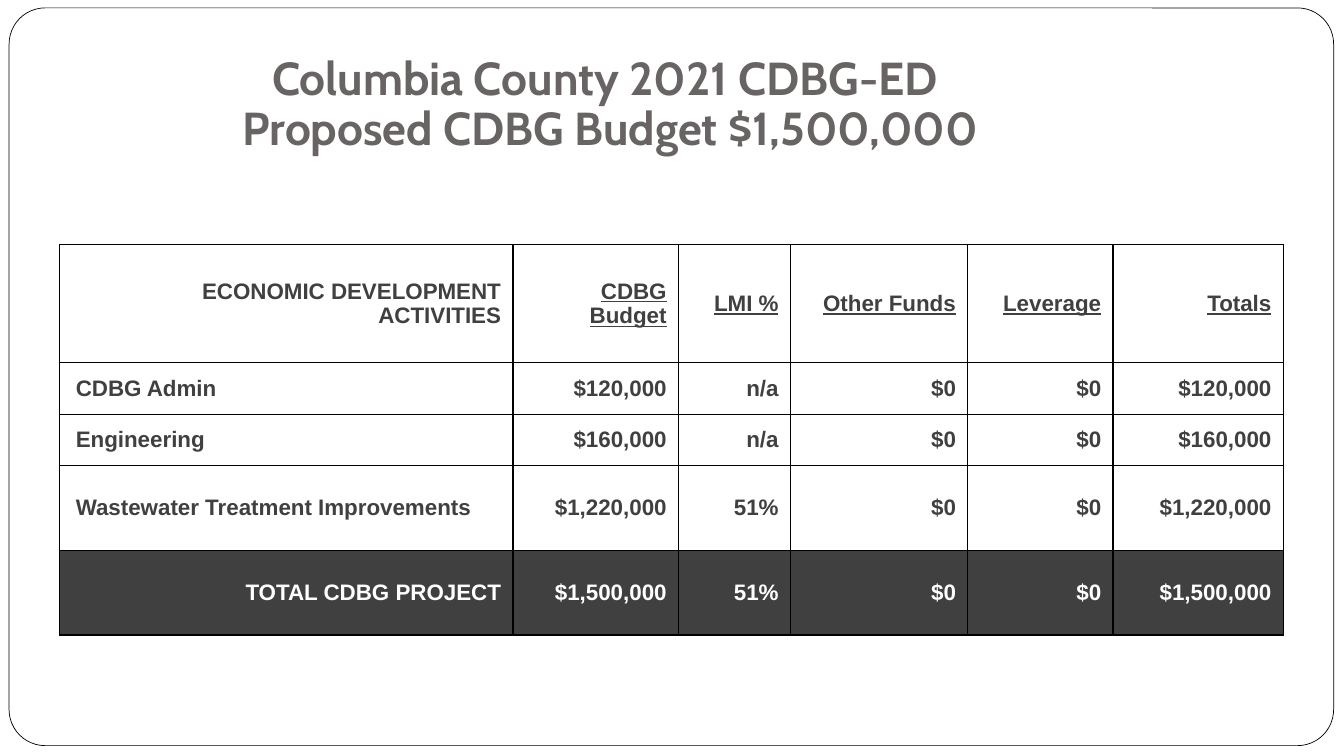
"""Build the Columbia County CDBG budget slide."""
import pptx
import pptx.dml.color
import pptx.enum.shapes
import pptx.enum.text
import pptx.oxml
import pptx.oxml.ns
import pptx.util

Cm, Pt = pptx.util.Cm, pptx.util.Pt
RGBColor = pptx.dml.color.RGBColor
ALIGN = pptx.enum.text.PP_ALIGN
ANCHOR = pptx.enum.text.MSO_ANCHOR

BLACK = RGBColor(0x00, 0x00, 0x00)
WHITE = RGBColor(0xFF, 0xFF, 0xFF)
CHARCOAL = RGBColor(0x40, 0x40, 0x40)
TITLE_GREY = RGBColor(0x69, 0x64, 0x64)

TITLE = "Columbia County 2021 CDBG-ED \vProposed CDBG Budget $1,500,000"
ROWS = [
    ("ECONOMIC DEVELOPMENT ACTIVITIES", "CDBG Budget", "LMI %", "Other Funds", "Leverage", "Totals"),
    ("CDBG Admin", "$120,000", "n/a", "$0", "$0", "$120,000"),
    ("Engineering", "$160,000", "n/a", "$0", "$0", "$160,000"),
    ("Wastewater Treatment Improvements", "$1,220,000", "51%", "$0", "$0", "$1,220,000"),
    ("TOTAL CDBG PROJECT", "$1,500,000", "51%", "$0", "$0", "$1,500,000"),
]
COL_WIDTHS = (11.43, 4.17, 2.82, 4.47, 3.66, 4.29)
ROW_HEIGHTS = (2.97, 1.3, 1.3, 2.13, 2.13)
FRAME_BOX = (0.23, 0.2, 33.38, 18.59)
TITLE_BOX = (5.59, 1.27, 19.58, 3.89)
TABLE_BOX = (1.5, 6.17, sum(COL_WIDTHS), sum(ROW_HEIGHTS))
CELL_FORMAT = {
    "margin_left": Cm(0.41), "margin_right": Cm(0.3),
    "margin_top": Cm(0.2), "margin_bottom": Cm(0.2),
    "vertical_anchor": ANCHOR.MIDDLE,
}


def set_attrs(obj, values):
    """Set every attribute in a dict on an object."""
    for name, value in values.items():
        setattr(obj, name, value)


def set_font(font, color, values):
    """Format a font and give it a colour."""
    set_attrs(font, values)
    font.color.rgb = color


def add_borders(cell):
    """Draw one-point black lines on all four sides of a cell."""
    tc_pr = cell._tc.get_or_add_tcPr()
    for side in "LRTB":
        tc_pr.append(pptx.oxml.parse_xml(
            f'<a:ln{side} {pptx.oxml.ns.nsdecls("a")} w="{Pt(1)}">'
            f'<a:solidFill><a:srgbClr val="{BLACK}"/></a:solidFill></a:ln{side}>'))


def add_title(s):
    """Place and format the title over the rounded frame."""
    title = s.shapes.title
    set_attrs(title, dict(zip(("left", "top", "width", "height"), map(Cm, TITLE_BOX))))
    tf = title.text_frame
    tf.text = TITLE
    set_attrs(tf, {"word_wrap": True, "vertical_anchor": ANCHOR.TOP,
                   "auto_size": pptx.enum.text.MSO_AUTO_SIZE.NONE})
    p = tf.paragraphs[0]
    set_attrs(p, {"alignment": ALIGN.CENTER, "line_spacing": 0.9})
    for r in p.runs:
        set_font(r.font, TITLE_GREY, {"name": "Cabin", "size": Pt(33), "bold": True})

    frame = s.shapes.add_shape(pptx.enum.shapes.MSO_SHAPE.ROUNDED_RECTANGLE, *map(Cm, FRAME_BOX))
    frame.adjustments[0] = 0.049
    frame.shadow.inherit = False
    frame.fill.solid()
    frame.fill.fore_color.rgb = WHITE
    frame.line.color.rgb = BLACK
    frame.line.width = Pt(0.5)
    title._element.addprevious(frame._element)


def add_budget(s):
    """Add the budget table with its header and total rows."""
    table = s.shapes.add_table(len(ROWS), len(COL_WIDTHS), *map(Cm, TABLE_BOX)).table
    for column, width in zip(table.columns, COL_WIDTHS):
        column.width = Cm(width)
    last = len(ROWS) - 1
    for i, (values, height) in enumerate(zip(ROWS, ROW_HEIGHTS)):
        table.rows[i].height = Cm(height)
        for j, value in enumerate(values):
            cell = table.cell(i, j)
            set_attrs(cell, CELL_FORMAT)
            add_borders(cell)
            cell.fill.solid()
            cell.fill.fore_color.rgb = CHARCOAL if i == last else WHITE
            cell.text = value
            p = cell.text_frame.paragraphs[0]
            p.alignment = ALIGN.LEFT if j == 0 and 0 < i < last else ALIGN.RIGHT
            set_font(p.runs[0].font, WHITE if i == last else CHARCOAL,
                     {"name": "Arial", "size": Pt(16), "bold": True,
                      "underline": i == 0 and j > 0})


def main():
    """Create the presentation and save it."""
    prs = pptx.Presentation()
    set_attrs(prs, {"slide_width": Cm(33.87), "slide_height": Cm(19.05)})
    s = prs.slides.add_slide(prs.slide_layouts[5])
    add_title(s)
    add_budget(s)
    prs.save("out.pptx")


if __name__ == "__main__":
    main()
